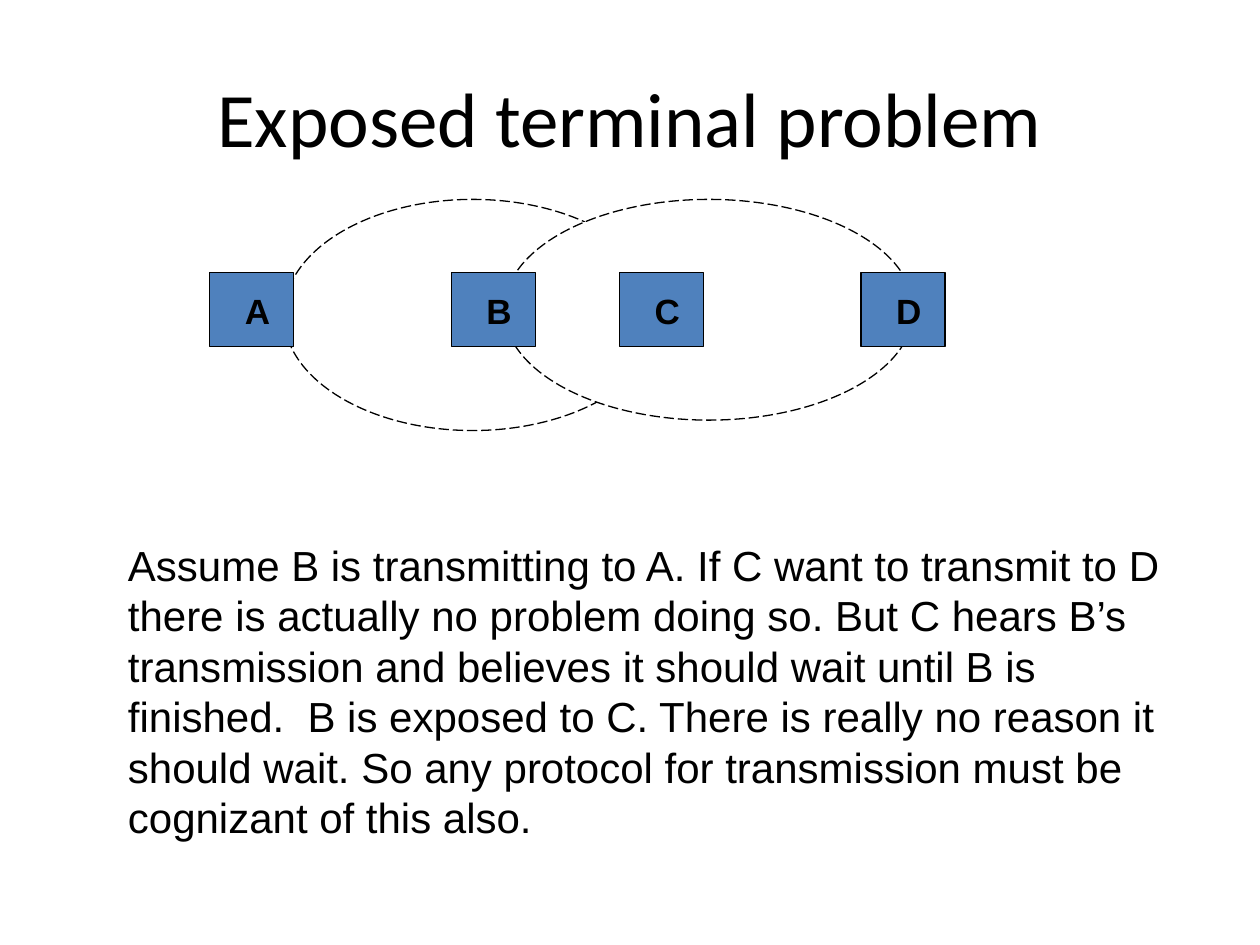
from pptx import Presentation
from pptx.dml.color import RGBColor
from pptx.enum import dml, shapes, text
from pptx.util import Cm, Pt

TITLE = "Exposed terminal problem"
EXPLANATION = (
    "Assume B is transmitting to A. If C want to transmit to D there is actually "
    "no problem doing so. But C hears B’s transmission and believes it should wait "
    "until B is finished.  B is exposed to C. There is really no reason it should "
    "wait. So any protocol for transmission must be cognizant of this also."
)
RANGES = [(5.72, 4.02, 7.62, 4.66), (10.16, 4.02, 8.26, 4.45)]
TERMINALS = {"A": 4.23, "B": 9.1, "C": 12.49, "D": 17.36}
TERMINAL_TOP, TERMINAL_WIDTH, TERMINAL_HEIGHT = 5.5, 1.69, 1.48
LABEL_RIGHT, LABEL_DOWN, LABEL_WIDTH, LABEL_HEIGHT = 0.43, 0.21, 1.06, 1.12

THEME = {
    "ink": RGBColor(0, 0, 0),
    "paper": RGBColor(255, 255, 255),
    "terminal": RGBColor(0x4F, 0x81, 0xBD),
    "line": Pt(0.75),
    "title": ("Calibri", 44, False),
    "label": ("Arial", 20, True),
    "body": ("Arial", 24, False),
}


def write(box, words, style, align):
    box.text_frame.text = words
    para = box.text_frame.paragraphs[0]
    para.alignment = align
    font = para.runs[0].font
    font.name, size, font.bold = THEME[style]
    font.size = Pt(size)
    font.color.rgb = THEME["ink"]


def add_outlined(page, kind, place, fill):
    shape = page.shapes.add_shape(kind, *map(Cm, place))
    shape.shadow.inherit = False
    shape.fill.solid()
    shape.fill.fore_color.rgb = THEME[fill]
    shape.line.color.rgb = THEME["ink"]
    shape.line.width = THEME["line"]
    return shape


def add_text(page, place, words, style, align):
    box = page.shapes.add_textbox(*map(Cm, place))
    box.text_frame.word_wrap = True
    box.text_frame.auto_size = text.MSO_AUTO_SIZE.SHAPE_TO_FIT_TEXT
    write(box, words, style, align)


def main():
    deck = Presentation()
    deck.slide_width, deck.slide_height = Cm(25.4), Cm(19.05)
    page = deck.slides.add_slide(deck.slide_layouts[5])

    title = page.shapes.title
    title.left, title.top, title.width, title.height = map(Cm, (1.27, 0.76, 22.86, 3.18))
    title.text_frame.vertical_anchor = text.MSO_ANCHOR.MIDDLE
    write(title, TITLE, "title", text.PP_ALIGN.CENTER)

    for place in RANGES:
        ellipse = add_outlined(page, shapes.MSO_SHAPE.OVAL, place, "paper")
        ellipse.line.dash_style = dml.MSO_LINE.LONG_DASH

    for name, left in TERMINALS.items():
        square = (left, TERMINAL_TOP, TERMINAL_WIDTH, TERMINAL_HEIGHT)
        add_outlined(page, shapes.MSO_SHAPE.RECTANGLE, square, "terminal")
        label = (left + LABEL_RIGHT, TERMINAL_TOP + LABEL_DOWN, LABEL_WIDTH, LABEL_HEIGHT)
        add_text(page, label, name, "label", text.PP_ALIGN.CENTER)

    add_text(page, (2.33, 10.75, 21.38, 6.4), EXPLANATION, "body", text.PP_ALIGN.LEFT)
    deck.save("out.pptx")


if __name__ == "__main__":
    main()
